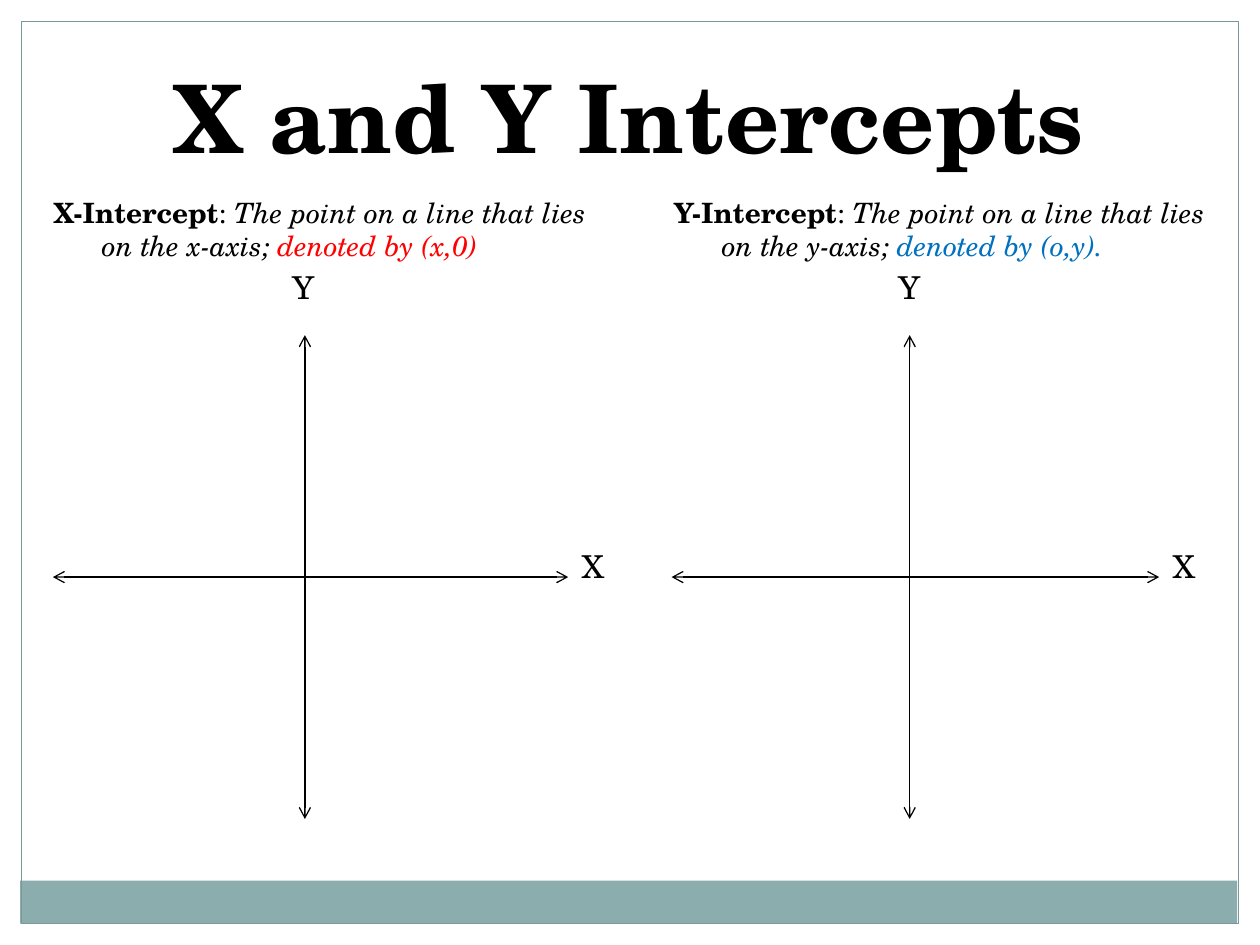
from lxml import etree
from pptx import Presentation
from pptx.dml.color import RGBColor
from pptx.enum.shapes import MSO_CONNECTOR as CONNECTOR, MSO_SHAPE as SHAPE
from pptx.enum.text import MSO_ANCHOR as ANCHOR, PP_ALIGN as ALIGN
from pptx.oxml.ns import qn
from pptx.util import Inches, Pt

FONT = "TeX Gyre Schola"


def color(value):
    return RGBColor.from_string(value)


def add_text(shapes, box, runs, size, align=ALIGN.LEFT):
    """Add a text box; each run is (text, bold, italic, color)."""
    frame = shapes.add_textbox(*map(Inches, box)).text_frame
    frame.word_wrap = True
    frame.vertical_anchor = ANCHOR.TOP
    paragraph = frame.paragraphs[0]
    paragraph.alignment = align
    for text, bold, italic, run_color in runs:
        run = paragraph.add_run()
        run.text = text
        run.font.name = FONT
        run.font.size = Pt(size)
        run.font.bold = bold
        run.font.italic = italic
        run.font.color.rgb = color(run_color)
    return paragraph


presentation = Presentation()
presentation.slide_width = Inches(10)
presentation.slide_height = Inches(7.5)
slide = presentation.slides.add_slide(presentation.slide_layouts[6])

# White margins, footer band and frame
for box, fill, line in [
    ((0, 0, 10, 0.17), "FFFFFF", None),
    ((9.83, 0, 0.17, 7.5), "FFFFFF", None),
    ((0, 0, 0.17, 7.5), "FFFFFF", None),
    ((0.16, 6.99, 9.66, 0.34), "8CADAE", None),
    ((0.17, 0.17, 9.66, 7.16), None, "7C999A"),
]:
    shape = slide.shapes.add_shape(SHAPE.RECTANGLE, *map(Inches, box))
    shape.shadow.inherit = False
    if fill:
        shape.fill.solid()
        shape.fill.fore_color.rgb = color(fill)
    else:
        shape.fill.background()
    if line:
        shape.line.color.rgb = color(line)
        shape.line.width = Pt(0.75)
    else:
        shape.line.fill.background()

# Title
add_text(slide.shapes, (0.33, 0.42, 9.33, 0.83),
         [("X and Y Intercepts", True, False, "000000")], 54, ALIGN.CENTER)

# Definitions
for left, term, meaning, notation, accent in [
    (0.33, "X-Intercept", "The point on a line that lies on the x-axis; ",
     "denoted by (x,0)", "FF0000"),
    (5.25, "Y-Intercept", "The point on a line that lies on the y-axis; ",
     "denoted by (o,y).", "0070C0"),
]:
    paragraph = add_text(slide.shapes, (left, 1.5, 4.42, 5.12), [
        (term, True, False, "000000"),
        (": ", False, False, "000000"),
        (meaning, False, True, "000000"),
        (notation, False, True, accent),
    ], 16)
    properties = paragraph._p.get_or_add_pPr()
    properties.set("marL", str(Inches(0.38)))
    properties.set("indent", str(-Inches(0.38)))

# Coordinate axes
top, middle, bottom = 2.66, 4.58, 6.5
for left, center, right, label_width in [(0.42, 2.42, 4.51, 0.4),
                                         (5.33, 7.22, 9.2, 0.38)]:
    axes = slide.shapes.add_group_shape()
    for ends in [(center, top, center, bottom), (left, middle, right, middle)]:
        axis = axes.shapes.add_connector(CONNECTOR.STRAIGHT, *map(Inches, ends))
        axis.line.color.rgb = color("000000")
        axis.line.width = Pt(0.75)
        line_xml = axis.line._get_or_add_ln()
        for end in ("a:headEnd", "a:tailEnd"):
            etree.SubElement(line_xml, qn(end), type="arrow")
        etree.SubElement(axis._element.spPr, qn("a:effectLst"))
    for name, label_left, label_top in [("X", right + 0.01, 4.29),
                                        ("Y", center - label_width / 2, 2.08)]:
        add_text(axes.shapes, (label_left, label_top, label_width, 0.47),
                 [(name, False, False, "000000")], 18)

presentation.save("out.pptx")
